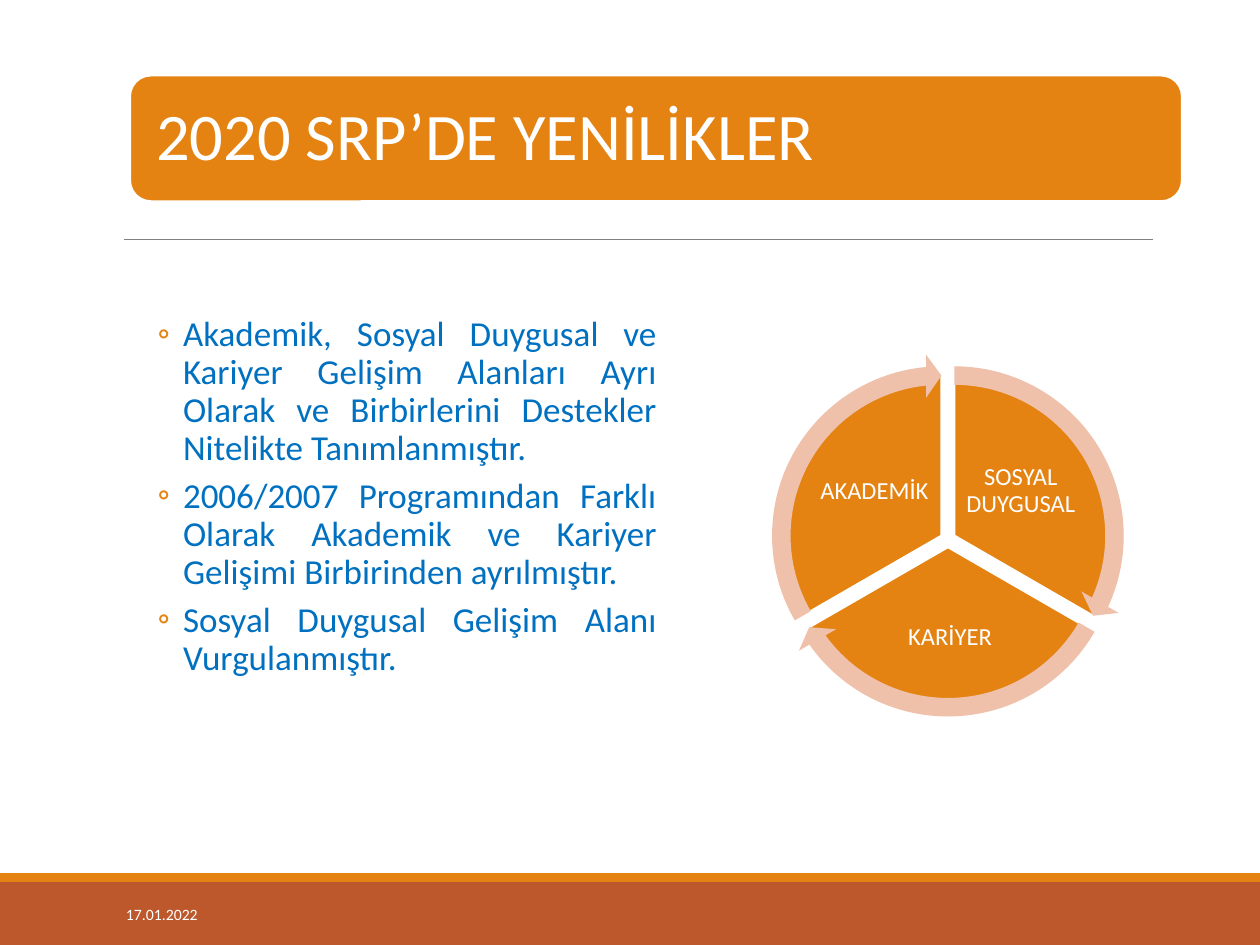
import lxml.etree
import pptx
import pptx.dml.color
import pptx.enum.shapes
import pptx.enum.text
import pptx.oxml.ns
import pptx.util

Cm = pptx.util.Cm
Pt = pptx.util.Pt
RGB = pptx.dml.color.RGBColor
SHAPE = pptx.enum.shapes.MSO_SHAPE
ALIGN = pptx.enum.text.PP_ALIGN
ANCHOR = pptx.enum.text.MSO_ANCHOR
qn = pptx.oxml.ns.qn

ORANGE = RGB(0xE4, 0x83, 0x12)
RUST = RGB(0xBD, 0x58, 0x2C)
PEACH = RGB(0xEF, 0xC1, 0xAB)
BLUE = RGB(0x00, 0x70, 0xC0)
GRAY = RGB(0x80, 0x80, 0x80)
WHITE = RGB(0xFF, 0xFF, 0xFF)

TITLE = "2020 SRP’DE YENİLİKLER"
DATE = "17.01.2022"
POINTS = [
    "Akademik, Sosyal Duygusal ve Kariyer Gelişim Alanları Ayrı Olarak ve "
    "Birbirlerini Destekler Nitelikte Tanımlanmıştır.",
    "2006/2007 Programından Farklı Olarak Akademik ve Kariyer Gelişimi "
    "Birbirinden ayrılmıştır.",
    "Sosyal Duygusal Gelişim Alanı Vurgulanmıştır.",
]
SECTORS = [
    {"label": "SOSYAL DUYGUSAL", "start": 270, "shift": (0.13, 0),
     "label_at": (19.41, 8.94, 2.34, 1.93)},
    {"label": "KARİYER", "start": 30, "shift": (0, 0.23),
     "label_at": (17.4, 12.01, 3.51, 1.7)},
    {"label": "AKADEMİK", "start": 150, "shift": (-0.13, 0),
     "label_at": (16.46, 8.94, 2.34, 1.93)},
]
BANDS = [((0, 17.78, 25.4, 1.27), RUST), ((0, 17.6, 25.4, 0.18), ORANGE)]

CENTER = (19.11, 10.8)
PIE_SIZE = 6.53
ARROW_SIZE = 7.32
SWEEP = 120
ANGLE_UNIT = 0.6
ARROW_THICKNESS, ARROW_HEAD, ARROW_WIDTH = 0.051, 3.275, 0.059

TITLE_PARA = {"alignment": ALIGN.LEFT, "line_spacing": 0.9}
LABEL_PARA = {"alignment": ALIGN.CENTER, "line_spacing": 0.9}
POINT_PARA = {"alignment": ALIGN.JUSTIFY, "line_spacing": 0.9,
              "space_before": Pt(2), "space_after": Pt(4)}
DATE_PARA = {"alignment": ALIGN.LEFT}


def apply(target, values):
    for name, value in values.items():
        setattr(target, name, value)


def place(shape, at):
    apply(shape, dict(zip(("left", "top", "width", "height"), map(Cm, at))))


def add_filled(page, kind, at, fill, line=None, adjustments=()):
    shape = page.shapes.add_shape(kind, *map(Cm, at))
    shape.shadow.inherit = False
    shape.fill.solid()
    shape.fill.fore_color.rgb = fill
    if line is None:
        shape.line.fill.background()
    else:
        shape.line.color.rgb = line
        shape.line.width = Pt(1.25)
    for index, value in enumerate(adjustments):
        shape.adjustments[index] = value
    return shape


def write(box, texts, size, color, para_format, insets, anchor):
    frame = box.text_frame
    margins = zip(("margin_left", "margin_top", "margin_right", "margin_bottom"),
                  map(Cm, insets))
    apply(frame, {"word_wrap": True, "vertical_anchor": anchor,
                  "auto_size": pptx.enum.text.MSO_AUTO_SIZE.NONE, **dict(margins)})
    for index, text in enumerate(texts):
        para = frame.paragraphs[0] if index == 0 else frame.add_paragraph()
        apply(para, para_format)
        span = para.add_run()
        span.text = text
        apply(span.font, {"name": "Calibri", "size": Pt(size)})
        span.font.color.rgb = color


def add_bullet(para):
    properties = para._p.get_or_add_pPr()
    properties.set("marL", str(Cm(1.07)))
    properties.set("indent", str(Cm(-0.51)))
    color = lxml.etree.SubElement(properties, qn("a:buClr"))
    lxml.etree.SubElement(color, qn("a:srgbClr"), val=str(ORANGE))
    lxml.etree.SubElement(properties, qn("a:buFont"), typeface="Calibri")
    lxml.etree.SubElement(properties, qn("a:buChar"), char="◦")


def centered(shift, size):
    left, top = (middle + move - size / 2 for middle, move in zip(CENTER, shift))
    return left, top, size, size


def add_frame(page):
    for at, color in BANDS:
        add_filled(page, SHAPE.RECTANGLE, at, color)
    rule = page.shapes.add_connector(
        pptx.enum.shapes.MSO_CONNECTOR.STRAIGHT, *map(Cm, (2.49, 4.83, 23.24, 4.83)))
    rule.line.color.rgb = GRAY
    rule.line.width = Pt(0.5)
    lxml.etree.SubElement(rule.element.spPr, qn("a:effectLst"))
    date = page.shapes.add_textbox(*map(Cm, (2.29, 17.93, 5.16, 1.02)))
    write(date, [DATE], 9, WHITE, DATE_PARA, (0.25, 0.13, 0.25, 0.13), ANCHOR.MIDDLE)


def add_title(page):
    card = add_filled(page, SHAPE.ROUNDED_RECTANGLE, (2.62, 1.52, 21.21, 2.54),
                      ORANGE, WHITE)
    title = page.shapes.title
    title.element.addprevious(card.element)
    place(title, (2.74, 1.65, 20.96, 2.29))
    write(title, [TITLE], 38, WHITE, TITLE_PARA, (0.41,) * 4, ANCHOR.MIDDLE)


def add_points(page):
    body = page.placeholders[1]
    place(body, (2.62, 6.25, 10.62, 8.38))
    write(body, POINTS, 20, BLUE, POINT_PARA, (0, 0.13, 0, 0.13), ANCHOR.TOP)
    for para in body.text_frame.paragraphs:
        add_bullet(para)


def add_cycle(page):
    for sector in SECTORS:
        start = sector["start"] * ANGLE_UNIT
        end = (sector["start"] + SWEEP) % 360 * ANGLE_UNIT
        add_filled(page, SHAPE.PIE, centered(sector["shift"], PIE_SIZE),
                   ORANGE, WHITE, (start, end))
        label = page.shapes.add_textbox(*map(Cm, sector["label_at"]))
        write(label, [sector["label"]], 14, WHITE, LABEL_PARA, (0.05,) * 4,
              ANCHOR.MIDDLE)
    for sector in SECTORS:
        start = sector["start"] * ANGLE_UNIT
        end = (sector["start"] + SWEEP) % 360 * ANGLE_UNIT
        add_filled(page, SHAPE.CIRCULAR_ARROW, centered(sector["shift"], ARROW_SIZE),
                   PEACH, None,
                   (ARROW_THICKNESS, ARROW_HEAD, end - ARROW_HEAD, start, ARROW_WIDTH))


def main():
    deck = pptx.Presentation()
    deck.slide_width, deck.slide_height = Cm(25.4), Cm(19.05)
    page = deck.slides.add_slide(deck.slide_layouts[1])
    add_frame(page)
    add_title(page)
    add_points(page)
    add_cycle(page)
    deck.save("out.pptx")


if __name__ == "__main__":
    main()
